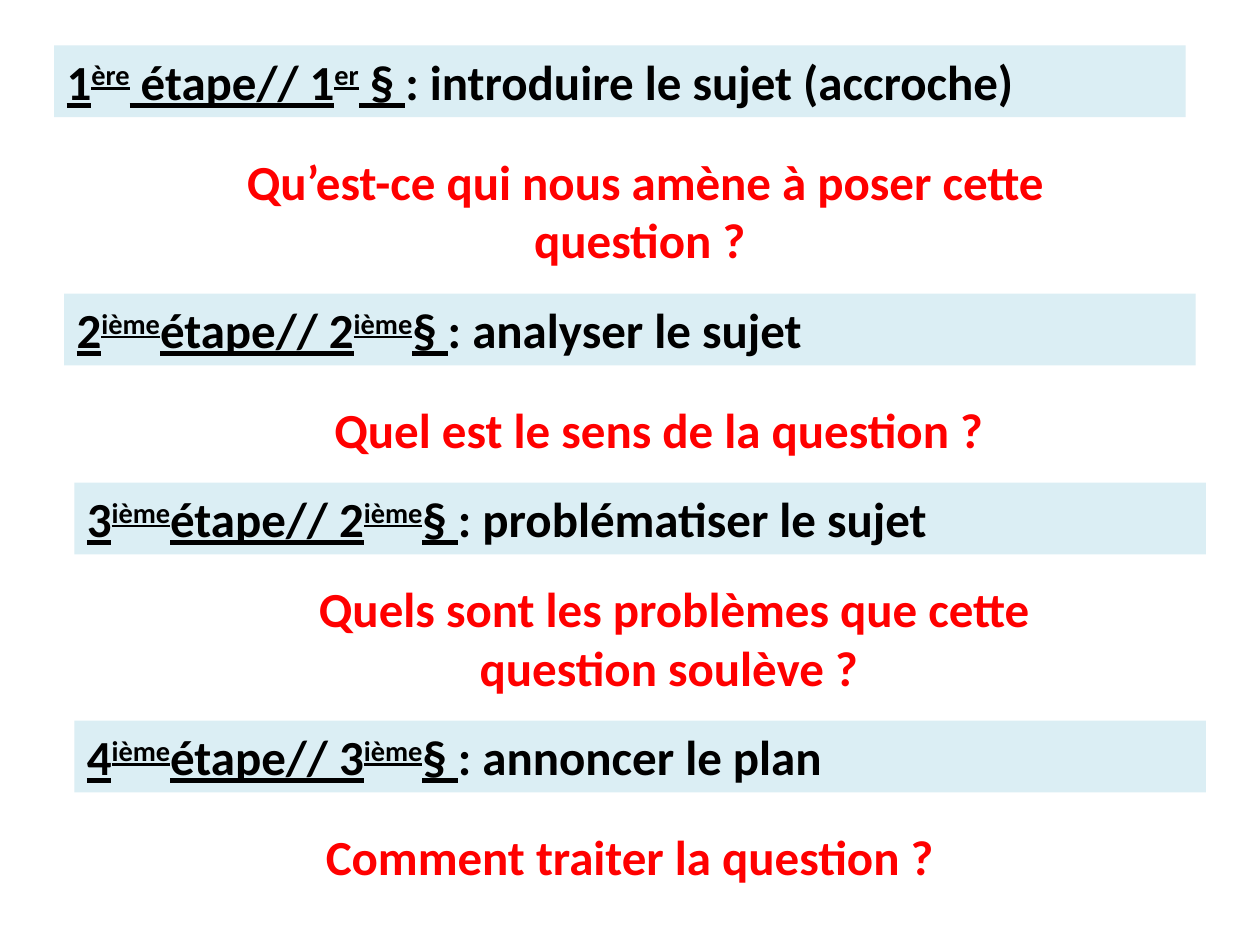
from pptx import Presentation
from pptx.dml.color import RGBColor
from pptx.enum.shapes import MSO_SHAPE as Shape
from pptx.enum.text import MSO_ANCHOR as Anchor, MSO_AUTO_SIZE as Fit, PP_ALIGN as Align
from pptx.util import Inches, Pt

COLS, ROWS = 100, 75
WIDE, HIGH = Inches(10), Inches(7.5)
BAR, ASK = 89.8, 73.2
LINE, PAIR = 5.7, 10.4

STEPS = [
    ((4.3, 3.6), ("1", "ère", " étape// 1", "er", " § "), ": introduire le sujet (accroche)",
     (14.6, 11.5), PAIR, "Qu’est-ce qui nous amène à poser cette question ? "),
    ((5.1, 23.3), ("2", "ième", "étape// 2", "ième", "§ "), ": analyser le sujet",
     (16.1, 31.2), LINE, "Quel est le sens de la question ? "),
    ((5.9, 38.3), ("3", "ième", "étape// 2", "ième", "§ "), ": problématiser le sujet",
     (16.9, 45.4), PAIR, "Quels sont les problèmes que cette question soulève ? "),
    ((5.9, 57.2), ("4", "ième", "étape// 3", "ième", "§ "), ": annoncer le plan",
     (13.8, 65.1), LINE, "Comment traiter la question ? "),
]


def color(code):
    """Turn a hex string into a colour."""
    return RGBColor.from_string(code)


def place(col, row, wide, high):
    """Turn a grid box into slide lengths."""
    return [round(n) for n in (col * WIDE / COLS, row * HIGH / ROWS,
                               wide * WIDE / COLS, high * HIGH / ROWS)]


def write(para, text, ink="000000", size=28, bold=True, under=False, raised=False):
    """Add one formatted run to a paragraph."""
    run = para.add_run()
    run.text = text
    font = run.font
    font.name, font.size, font.bold = "Calibri", Pt(size), bold
    font.underline = under
    font.color.rgb = color(ink)
    if raised:
        run._r.get_or_add_rPr().set("baseline", "30000")


def start(shape, align):
    """Set up the text frame and return its first paragraph."""
    frame = shape.text_frame
    frame.word_wrap = True
    frame.auto_size = Fit.SHAPE_TO_FIT_TEXT
    frame.vertical_anchor = Anchor.TOP
    para = frame.paragraphs[0]
    para.alignment = align
    return para


def add_step(slide, box, label, title):
    """Draw a tinted bar with its underlined label and title."""
    bar = slide.shapes.add_shape(Shape.RECTANGLE, *place(*box))
    bar.shadow.inherit = False
    bar.fill.solid()
    bar.fill.fore_color.rgb = color("DBEEF4")
    bar.line.fill.background()
    para = start(bar, Align.JUSTIFY)
    for i, part in enumerate(label):
        write(para, part, under=True, raised=i % 2 == 1)
    write(para, title)


def add_ask(slide, box, text):
    """Draw the red question below a bar."""
    area = slide.shapes.add_textbox(*place(*box))
    write(start(area, Align.CENTER), text, ink="FF0000")


def main():
    """Build and save the slide."""
    deck = Presentation()
    deck.slide_width, deck.slide_height = WIDE, HIGH
    slide = deck.slides.add_slide(deck.slide_layouts[6])
    for bar, label, title, ask, high, text in STEPS:
        add_step(slide, (*bar, BAR, LINE), label, title)
        add_ask(slide, (*ask, ASK, high), text)
    deck.save("out.pptx")


if __name__ == "__main__":
    main()
